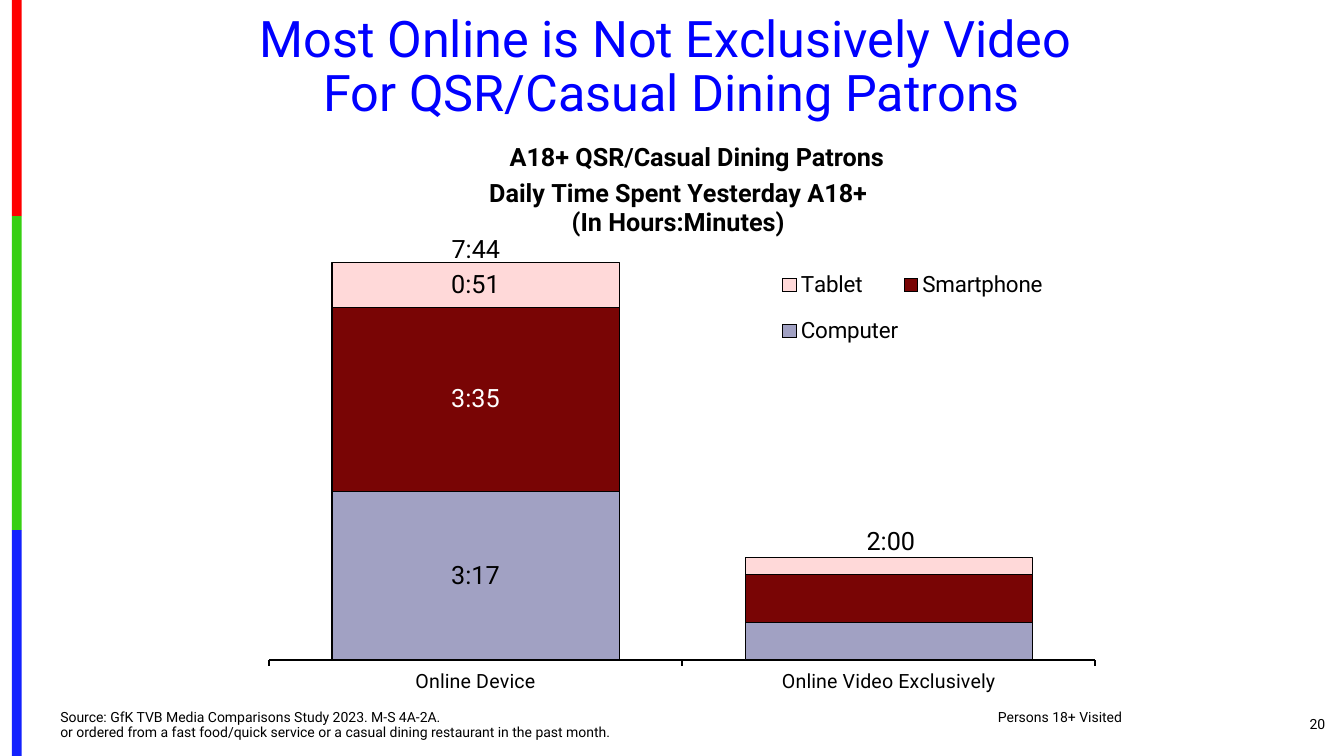
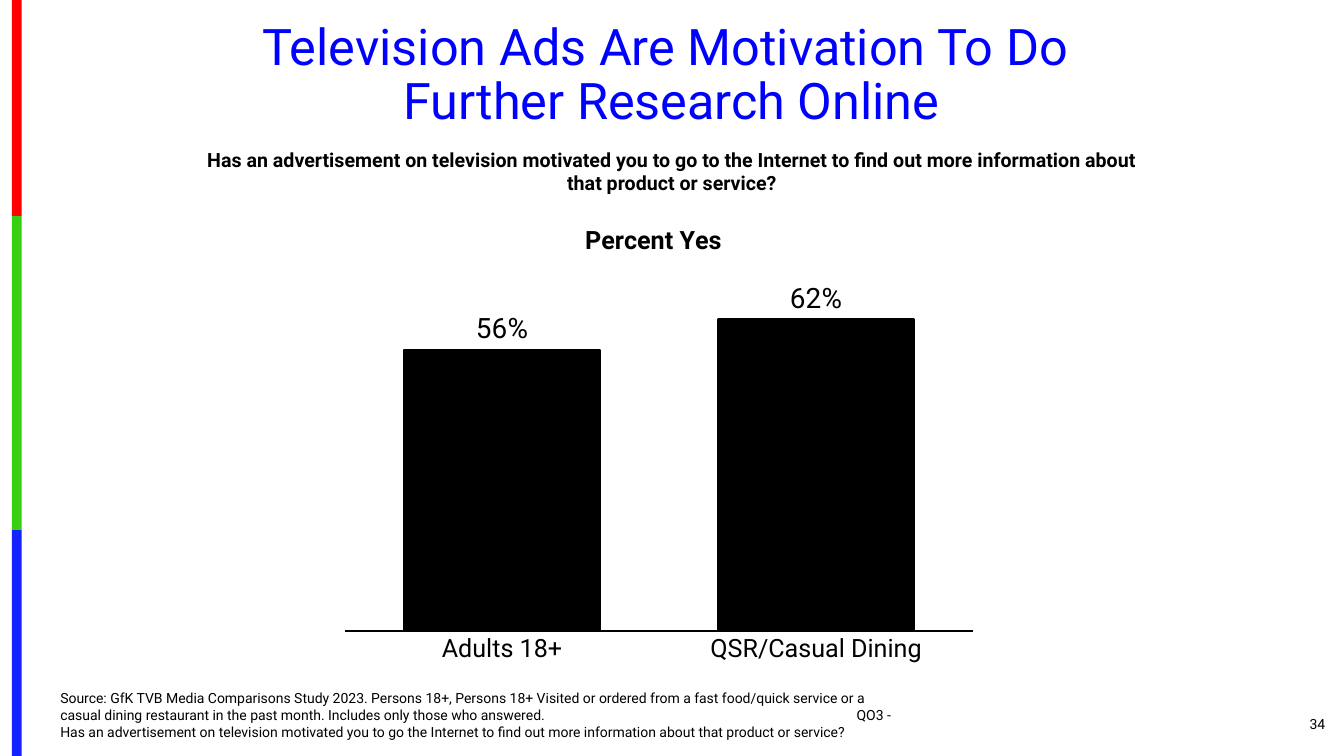
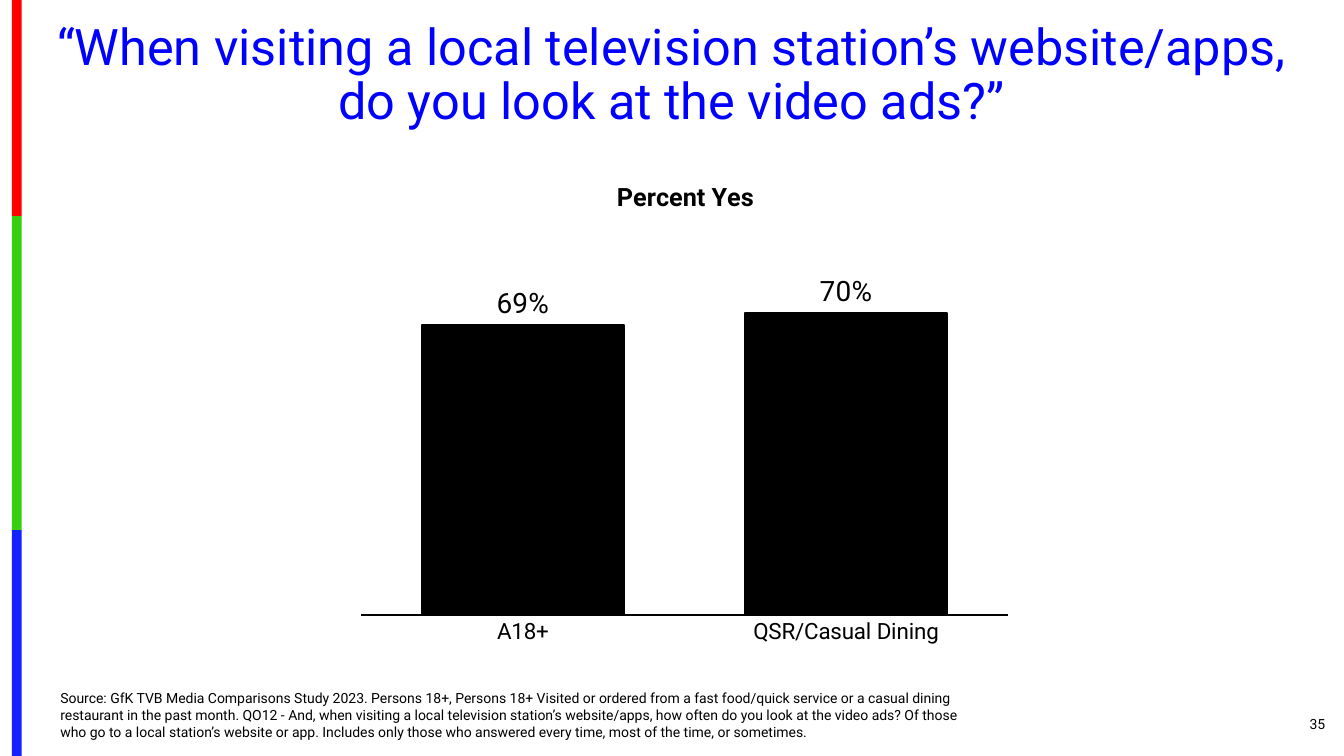
"""Build three slides on media habits of restaurant patrons."""
from lxml import etree
from pptx import Presentation
from pptx.chart.data import CategoryChartData
from pptx.dml.color import RGBColor
from pptx.enum.chart import XL_CHART_TYPE as CT, XL_LABEL_POSITION as LP
from pptx.enum.chart import XL_LEGEND_POSITION as LEG, XL_TICK_MARK as TICK
from pptx.enum.shapes import MSO_SHAPE as SHAPE
from pptx.enum.text import MSO_ANCHOR as ANCHOR, MSO_AUTO_SIZE as AUTO, PP_ALIGN as AL
from pptx.oxml.ns import qn
from pptx.util import Cm, Pt


class Deck:
    FONT = "Roboto"
    COLORS = {
        "red": "FE0000", "green": "36CF12", "blue": "1322FE",
        "title": "0000FF", "black": "000000", "white": "FFFFFF",
        "computer": "A1A1C3", "smartphone": "790505", "tablet": "FFD9D9",
    }
    BANDS = [("red", 0, 5.45), ("green", 5.45, 13.36), ("blue", 13.36, 19.05)]
    FOOT = 18.78

    def __init__(self):
        self.prs = Presentation()
        self.prs.slide_width, self.prs.slide_height = Cm(33.87), Cm(19.05)
        self.s = None

    def color(self, name):
        return RGBColor.from_string(self.COLORS[name])

    def style(self, font, size, color="black", bold=False):
        font.name, font.size, font.bold = self.FONT, Pt(size), bold
        font.color.rgb = self.color(color)

    def slide(self, title, number, box=(1.15, 0.42, 31.55, 3.02)):
        self.s = self.prs.slides.add_slide(self.prs.slide_layouts[5])
        for name, top, bottom in self.BANDS:
            self.band(name, top, bottom)
        sp = self.s.shapes.title
        sp.left, sp.top, sp.width, sp.height = map(Cm, box)
        self.fill_text(sp.text_frame, title, 36, "title", align=AL.CENTER, spacing=0.9)
        self.text(str(number), (30.91, 17.73, 2.74, 1.02), 10,
                  align=AL.RIGHT, anchor=ANCHOR.MIDDLE)

    def band(self, name, top, bottom):
        sp = self.s.shapes.add_shape(SHAPE.RECTANGLE, Cm(0.3), Cm(top),
                                     Cm(0.25), Cm(bottom - top))
        sp.shadow.inherit = False
        sp.fill.solid()
        sp.fill.fore_color.rgb = self.color(name)
        sp.line.fill.background()

    def fill_text(self, tf, text, size, color="black", bold=False, align=AL.LEFT,
                  anchor=ANCHOR.TOP, spacing=None, wrap=True):
        tf.word_wrap, tf.auto_size, tf.vertical_anchor = wrap, AUTO.NONE, anchor
        p = tf.paragraphs[0]
        p.text, p.alignment, p.line_spacing = text, align, spacing
        for r in p.runs:
            self.style(r.font, size, color, bold)
        return p

    def text(self, text, box, size, **options):
        sp = self.s.shapes.add_textbox(*map(Cm, box))
        return self.fill_text(sp.text_frame, text, size, **options)

    def source(self, text, width, height, tab=None, spacing=None):
        p = self.text(text, (1.27, self.FOOT - height, width, height), 10,
                      anchor=ANCHOR.BOTTOM, spacing=spacing)
        if tab:
            tabs = etree.SubElement(p._p.get_or_add_pPr(), qn("a:tabLst"))
            etree.SubElement(tabs, qn("a:tab"), pos=str(Cm(tab)), algn="l")

    def place(self, chart, tag, index, percents):
        parent = chart.element.xpath(f".//c:{tag}")[0]
        for old in parent.findall(qn("c:layout")):
            parent.remove(old)
        node = etree.Element(qn("c:layout"))
        parent.insert(index, node)
        manual = etree.SubElement(node, qn("c:manualLayout"))
        if tag == "plotArea":
            etree.SubElement(manual, qn("c:layoutTarget"), val="inner")
        for key in "xy":
            etree.SubElement(manual, qn(f"c:{key}Mode"), val="edge")
        for key, percent in zip("xywh", percents):
            etree.SubElement(manual, qn(f"c:{key}"), val=f"{percent / 100:.3f}")

    def chart(self, kind, box, cats, series, title, title_at, plot, limits,
              fmt, gap, cat_size, tick=TICK.NONE):
        data = CategoryChartData(number_format=fmt)
        data.categories = cats
        for name, values in series:
            data.add_series(name, values)
        chart = self.s.shapes.add_chart(kind, *map(Cm, box), data).chart
        self.style(chart.font, 10)
        chart.has_legend = False
        tf = chart.chart_title.text_frame
        tf.text = title
        for p in tf.paragraphs:
            p.alignment = AL.CENTER
            for r in p.runs:
                self.style(r.font, 18, bold=True)
        self.place(chart, "title", 1, title_at)
        self.place(chart, "plotArea", 0, plot)
        val, cat = chart.value_axis, chart.category_axis
        val.visible = val.has_major_gridlines = False
        val.minimum_scale, val.maximum_scale = limits
        cat.major_tick_mark, cat.minor_tick_mark = tick, TICK.NONE
        cat.format.line.color.rgb = self.color("black")
        cat.format.line.width = Pt(1.5)
        self.style(cat.tick_labels.font, cat_size)
        chart.plots[0].gap_width = gap
        chart.plots[0].vary_by_categories = False
        return chart

    def paint(self, series, color, width):
        series.format.fill.solid()
        series.format.fill.fore_color.rgb = self.color(color)
        series.format.line.color.rgb = self.color("black")
        series.format.line.width = Pt(width)

    def stacked(self, box, cats, series, colors, **options):
        chart = self.chart(CT.COLUMN_STACKED, box, cats, series,
                           fmt="h:mm;@", gap=44, **options)
        chart.plots[0].overlap = 100
        for ser, (fill, ink) in zip(chart.plots[0].series, colors):
            self.paint(ser, fill, 0.75)
            labels = ser.data_labels
            labels.show_value = False
            labels.number_format, labels.number_format_is_linked = "h:mm;@", False
            self.style(ser.points[0].data_label.font, 18, ink)
        chart.has_legend = True
        chart.legend.position = LEG.RIGHT
        chart.legend.include_in_layout = False
        self.style(chart.legend.font, 16)
        self.place(chart, "legend", 1, (62, 27.6, 28.9, 17.9))

    def percent(self, box, cats, values, **options):
        chart = self.chart(CT.COLUMN_CLUSTERED, box, cats, [("Series 1", values)],
                           title="Percent Yes", fmt="0%", gap=60, **options)
        ser = chart.plots[0].series[0]
        self.paint(ser, "black", 1.5)
        labels = ser.data_labels
        labels.show_value, labels.position = True, LP.OUTSIDE_END
        labels.number_format, labels.number_format_is_linked = "0%", False
        self.style(labels.font, 20)


def hours(*minutes):
    return [round(m / 1440, 6) for m in minutes]


def main():
    d = Deck()

    d.slide("Most Online is Not Exclusively Video \vFor QSR/Casual Dining Patrons",
            20, (0.74, 0.22, 32.39, 3.02))
    d.source("Source: GfK TVB Media Comparisons Study 2023. M-S 4A-2A.\tPersons 18+ Visited\v"
             "or ordered from a fast food/quick service or a casual dining restaurant "
             "in the past month.", 27.5, 1.02, tab=23.63, spacing=0.9)
    d.stacked((4.88, 1.96, 23.7, 15.88), ["Online Device", "Online Video Exclusively"],
              [("Computer", hours(197, 44)), ("Smartphone", hours(215, 56)),
               ("Tablet", hours(52, 20))],
              [("computer", "black"), ("smartphone", "white"), ("tablet", "black")],
              title="Daily Time Spent Yesterday A18+\n(In Hours:Minutes)",
              title_at=(31.1, 15.3), plot=(8, 23.9, 87.9, 68.5),
              limits=(0, 0.35), cat_size=14, tick=TICK.OUTSIDE)
    for total, left, top in [("2:00", 21.59, 13.11), ("7:44", 11.13, 5.76)]:
        d.text(total, (left, top, 1.8, 1.02), 18, wrap=False)
    d.text("A18+ QSR/Casual Dining Patrons", (11.75, 3.43, 11.63, 1.02), 18,
           bold=True, align=AL.CENTER)

    d.slide("Television Ads Are Motivation To Do \vFurther Research Online", 34)
    d.source("Source: GfK TVB Media Comparisons Study 2023. Persons 18+, Persons 18+ Visited "
             "or ordered from a fast food/quick service or a casual dining restaurant in the "
             "past month. Includes only those who answered.\tQO3 -\vHas an advertisement on "
             "television motivated you to go the Internet to find out more information about "
             "that product or service?", 21.79, 1.55, tab=20.07)
    d.text("Has an advertisement on television motivated you to go to the Internet to find "
           "out more information about that product or service?",
           (4.77, 3.6, 24.33, 1.45), 14, bold=True, align=AL.CENTER)
    d.percent((8.67, 5.16, 15.88, 12.8), ["Adults 18+", "QSR/Casual Dining"], [0.56, 0.62],
              title_at=(37.5, 2.7), plot=(0, 14.7, 100, 69.2), limits=(0, 0.7), cat_size=18)

    d.slide("“When visiting a local television station’s website/apps, "
            "do you look at the video ads?”", 35)
    d.source("Source: GfK TVB Media Comparisons Study 2023. Persons 18+, Persons 18+ Visited "
             "or ordered from a fast food/quick service or a casual dining restaurant in the "
             "past month. QO12 - And, when visiting a local television station’s website/apps, "
             "how often do you look at the video ads? Of those who go to a local station’s "
             "website or app. Includes only those who answered every time, most of the time, "
             "or sometimes.", 23.5, 1.55)
    d.percent((8.26, 3.02, 17.98, 14.55), ["A18+", "QSR/Casual Dining"], [0.69, 0.7],
              title_at=(39.9, 9.6), plot=(4.7, 0, 90.6, 85.8), limits=(0.45, 0.86),
              cat_size=16)

    d.prs.save("out.pptx")


if __name__ == "__main__":
    main()
